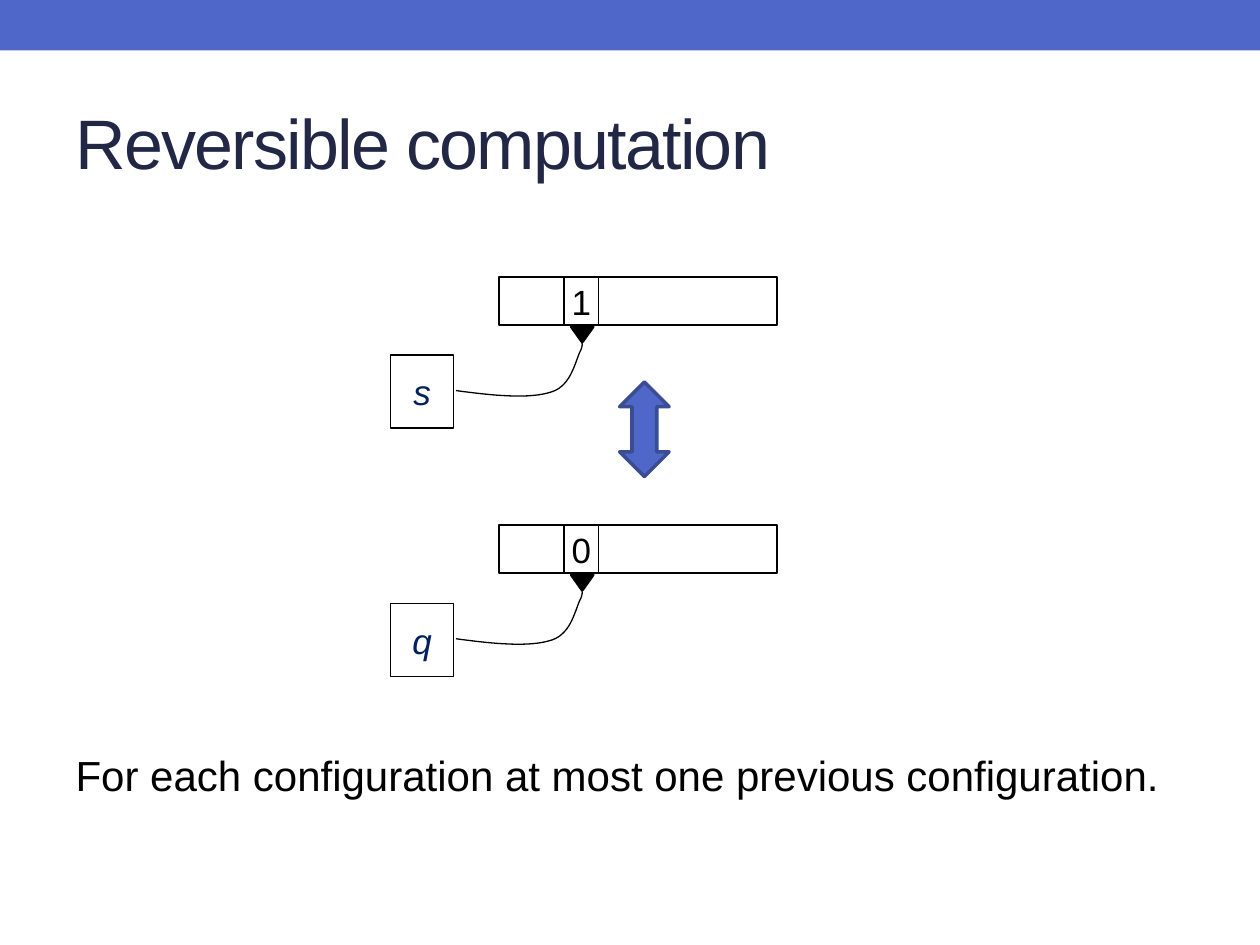
from dataclasses import dataclass

from lxml.etree import Element
from pptx import Presentation
from pptx.dml.color import RGBColor
from pptx.enum.shapes import MSO_SHAPE
from pptx.enum.text import MSO_ANCHOR, PP_ALIGN
from pptx.oxml.ns import qn
from pptx.util import Pt


@dataclass(frozen=True)
class Theme:
    """Colours, font and type sizes of the slide."""
    font: str = "Arial"
    accent: str = "4E67C8"
    accent_edge: str = "3A4C94"
    heading: str = "212745"
    ink: str = "000000"
    state: str = "002060"
    title_size: int = 40
    body_size: int = 24
    symbol_size: int = 20


THEME = Theme()
TAPE_LEFT = 285
TAPE_HEIGHT = 27.4
WIRE_START = (260.6, 64.8)
WIRE_CURVES = [
    ((281.5, 67.7), (303.1, 69.8), (315.4, 65.5)),
    ((326.9, 61.9), (329, 46.8), (331.9, 41.8)),
    ((334.1, 36.7), (331.2, 35.3), (331.2, 35.3)),
]


def style_text(paragraph, size, color, italic=None):
    """Set the paragraph's font, size and colour."""
    font = paragraph.font
    font.name, font.size, font.italic = THEME.font, Pt(size), italic
    font.color.rgb = RGBColor.from_string(color)


def paint(shape, fill=None, edge=None, weight=1):
    """Give a shape its fill and outline, and no shadow."""
    shape.shadow.inherit = False
    if fill:
        shape.fill.solid()
        shape.fill.fore_color.rgb = RGBColor.from_string(fill)
    else:
        shape.fill.background()
    if edge:
        shape.line.color.rgb = RGBColor.from_string(edge)
        shape.line.width = Pt(weight)
    else:
        shape.line.fill.background()


def add_figure(slide, kind, box, rotation=0, **look):
    """Add a painted preset shape."""
    figure = slide.shapes.add_shape(kind, *map(Pt, box))
    figure.rotation = rotation
    paint(figure, **look)
    return figure


def add_cell(slide, box, symbol="", color=THEME.ink, italic=None):
    """Add an outlined box, with a centred symbol if one is given."""
    cell = add_figure(slide, MSO_SHAPE.RECTANGLE, box, edge=THEME.ink)
    if symbol:
        frame = cell.text_frame
        frame.margin_left = frame.margin_right = 0
        frame.margin_top = frame.margin_bottom = Pt(1.4)
        frame.vertical_anchor = MSO_ANCHOR.MIDDLE
        paragraph = frame.paragraphs[0]
        paragraph.text = symbol
        paragraph.alignment = PP_ALIGN.CENTER
        style_text(paragraph, THEME.symbol_size, color, italic)


def bezier_points(start, curves, steps=16):
    """Return points along a chain of cubic curves."""
    points = [start]
    for a, b, end in curves:
        for step in range(1, steps + 1):
            t = step / steps
            u = 1 - t
            points.append(tuple(
                u**3 * p0 + 3 * u * u * t * p1 + 3 * u * t * t * p2 + t**3 * p3
                for p0, p1, p2, p3 in zip(start, a, b, end)
            ))
        start = end
    return points


def add_wire(slide, top):
    """Draw the curve from the state box to the tape head."""
    first, *rest = [(Pt(x), Pt(top + y)) for x, y in bezier_points(WIRE_START, WIRE_CURVES)]
    builder = slide.shapes.build_freeform(*first)
    builder.add_line_segments(rest, close=False)
    paint(builder.convert_to_shape(), edge=THEME.ink, weight=0.75)


def add_machine(slide, top, state, symbol):
    """Draw one configuration: tape, head, wire and state."""
    left = TAPE_LEFT
    for width, content in ((37.5, ""), (19.5, symbol), (102.2, "")):
        add_cell(slide, (left, top, width, TAPE_HEIGHT), content)
        left += width
    add_cell(slide, (223.2, top + 44.6, 36, 41.8), state, THEME.state, True)
    add_figure(slide, MSO_SHAPE.ISOSCELES_TRIANGLE, (326.6, top + 28.1, 12.2, 8.6),
               rotation=180, fill=THEME.ink, edge=THEME.ink, weight=2.08)
    add_wire(slide, top)


def fill_placeholder(placeholder, box, text, size, color, anchor):
    """Place a placeholder and write its single left-aligned paragraph."""
    placeholder.left, placeholder.top, placeholder.width, placeholder.height = map(Pt, box)
    frame = placeholder.text_frame
    frame.vertical_anchor = anchor
    paragraph = frame.paragraphs[0]
    paragraph.text = text
    paragraph.alignment = PP_ALIGN.LEFT
    style_text(paragraph, size, color)
    return paragraph


def add_title(slide, text):
    """Write the tightly spaced title."""
    title = fill_placeholder(slide.shapes.title, (36, 41.8, 648, 77.8), text,
                             THEME.title_size, THEME.heading, MSO_ANCHOR.MIDDLE)
    title._p.pPr.find(qn("a:defRPr")).set("spc", "-100")


def add_statement(slide, text):
    """Write the body sentence without a bullet."""
    statement = fill_placeholder(slide.placeholders[1], (36, 424.8, 648, 85), text,
                                 THEME.body_size, THEME.ink, MSO_ANCHOR.TOP)
    statement.space_before = Pt(6)
    properties = statement._p.pPr
    properties.set("marL", "0")
    properties.set("indent", "0")
    properties.find(qn("a:defRPr")).addprevious(Element(qn("a:buNone")))


def main():
    """Build and save the slide."""
    presentation = Presentation()
    presentation.slide_width, presentation.slide_height = Pt(720), Pt(540)
    slide = presentation.slides.add_slide(presentation.slide_layouts[1])
    add_figure(slide, MSO_SHAPE.RECTANGLE, (0, 0, 720, 28.8), fill=THEME.accent)
    add_title(slide, "Reversible computation")
    add_statement(slide, "For each configuration at most one previous configuration.")
    for top, state, symbol in ((158.4, "s", "1"), (300.2, "q", "0")):
        add_machine(slide, top, state, symbol)
    add_figure(slide, MSO_SHAPE.LEFT_RIGHT_ARROW, (341.2, 231.2, 54, 28.2), rotation=90,
               fill=THEME.accent, edge=THEME.accent_edge, weight=2.08)
    presentation.save("out.pptx")


if __name__ == "__main__":
    main()
